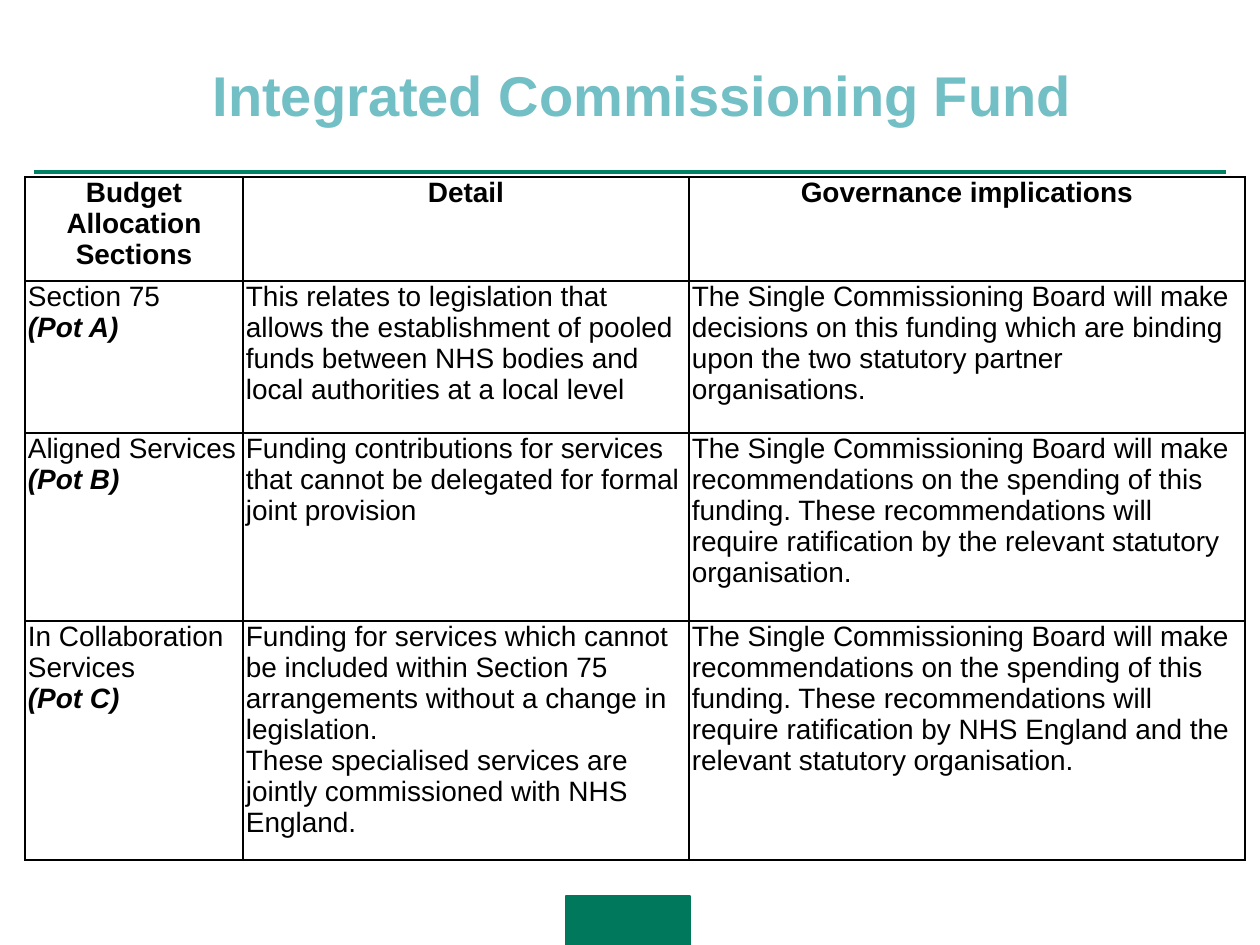
from dataclasses import dataclass

from lxml.etree import SubElement
from pptx import Presentation
from pptx.dml.color import RGBColor as Color
from pptx.enum.shapes import MSO_CONNECTOR as Connector, MSO_SHAPE as Shape
from pptx.enum.text import MSO_ANCHOR as Anchor, PP_ALIGN as Align
from pptx.oxml.ns import qn
from pptx.util import Emu, Pt

EMU_PER_PX = 914400 / 126


def px(length):
    return Emu(round(length * EMU_PER_PX))


def apply_format(target, values):
    for name, value in values.items():
        setattr(target, name, value)


@dataclass(frozen=True)
class Theme:
    font: str = "Arial"
    title: str = "72BFC5"
    text: str = "000000"
    rule: str = "008265"
    block: str = "00785C"
    title_size: int = 32
    table_size: int = 16


class SlideBuilder:
    def __init__(self, page, theme):
        self.page = page
        self.theme = theme

    def add_text(self, para, text, size, color, align=Align.LEFT, bold=False, italic=False):
        para.alignment = align
        span = para.add_run()
        span.text = text
        apply_format(span.font, {
            "name": self.theme.font, "size": Pt(size), "bold": bold, "italic": italic,
        })
        span.font.color.rgb = Color.from_string(color)

    def title(self, text, left, top, width, height):
        box = self.page.shapes.add_textbox(px(left), px(top), px(width), px(height))
        frame = box.text_frame
        apply_format(frame, {
            "word_wrap": True, "vertical_anchor": Anchor.TOP,
            "margin_left": px(27), "margin_right": px(13), "margin_top": px(11),
        })
        self.add_text(frame.paragraphs[0], text, self.theme.title_size,
                      self.theme.title, Align.CENTER, bold=True)

    def rule(self, left, right, y):
        line = self.page.shapes.add_connector(
            Connector.STRAIGHT, px(left), px(y), px(right), px(y))
        line.line.color.rgb = Color.from_string(self.theme.rule)
        line.line.width = Pt(2.25)
        SubElement(line._element.spPr, qn("a:effectLst"))

    def block(self, left, top, width, height):
        box = self.page.shapes.add_shape(
            Shape.RECTANGLE, px(left), px(top), px(width), px(height))
        box.shadow.inherit = False
        color = Color.from_string(self.theme.block)
        box.fill.solid()
        box.fill.fore_color.rgb = color
        box.line.color.rgb = color
        box.line.width = Pt(0.75)

    def border(self, cell):
        properties = cell._tc.get_or_add_tcPr()
        for side in ("lnL", "lnR", "lnT", "lnB"):
            line = SubElement(properties, qn(f"a:{side}"), w=str(Pt(1)))
            fill = SubElement(line, qn("a:solidFill"))
            SubElement(fill, qn("a:srgbClr"), val=self.theme.text)

    def cell(self, cell, lines, header):
        apply_format(cell, {
            "margin_left": px(3), "margin_right": px(3),
            "margin_top": 0, "margin_bottom": 0, "vertical_anchor": Anchor.TOP,
        })
        self.border(cell)
        cell.fill.background()
        frame = cell.text_frame
        for index, text in enumerate(lines):
            para = frame.add_paragraph() if index else frame.paragraphs[0]
            pot = text.startswith("(Pot")
            self.add_text(para, text, self.theme.table_size, self.theme.text,
                          Align.CENTER if header else Align.LEFT, header or pot, pot)

    def table(self, rows, left, top, widths, heights):
        table = self.page.shapes.add_table(
            len(heights), len(widths), px(left), px(top),
            px(sum(widths)), px(sum(heights))).table
        apply_format(table, {"first_row": False, "horz_banding": False})
        for column, width in zip(table.columns, widths):
            column.width = px(width)
        for index, (row, height, values) in enumerate(zip(table.rows, heights, rows)):
            row.height = px(height)
            for cell, lines in zip(row.cells, values):
                self.cell(cell, lines, index == 0)


RECOMMENDATIONS = (
    "The Single Commissioning Board will make recommendations on the spending of this "
    "funding. These recommendations will require ratification by {}."
)

FUND_ROWS = [
    [["Budget Allocation Sections"], ["Detail"], ["Governance implications"]],
    [
        ["Section 75", "(Pot A)"],
        ["This relates to legislation that allows the establishment of pooled funds "
         "between NHS bodies and local authorities at a local level"],
        ["The Single Commissioning Board will make decisions on this funding which are "
         "binding upon the two statutory partner organisations."],
    ],
    [
        ["Aligned Services", "(Pot B)"],
        ["Funding contributions for services that cannot be delegated for formal "
         "joint provision"],
        [RECOMMENDATIONS.format("the relevant statutory organisation")],
    ],
    [
        ["In Collaboration Services", "(Pot C)"],
        ["Funding for services which cannot be included within Section 75 arrangements "
         "without a change in legislation.",
         "These specialised services are jointly commissioned with NHS England."],
        [RECOMMENDATIONS.format("NHS England and the relevant statutory organisation")],
    ],
]


def main():
    deck = Presentation()
    apply_format(deck, {"slide_width": px(1260), "slide_height": px(945)})
    page = deck.slides.add_slide(deck.slide_layouts[6])
    builder = SlideBuilder(page, Theme())
    builder.rule(34, 1226, 172)
    builder.block(566, 896, 124, 49)
    builder.table(FUND_ROWS, 25, 177, [218, 446, 556], [104, 152, 188, 239])
    builder.title("Integrated Commissioning Fund", 95, 49, 1081, 118)
    deck.save("out.pptx")


if __name__ == "__main__":
    main()
